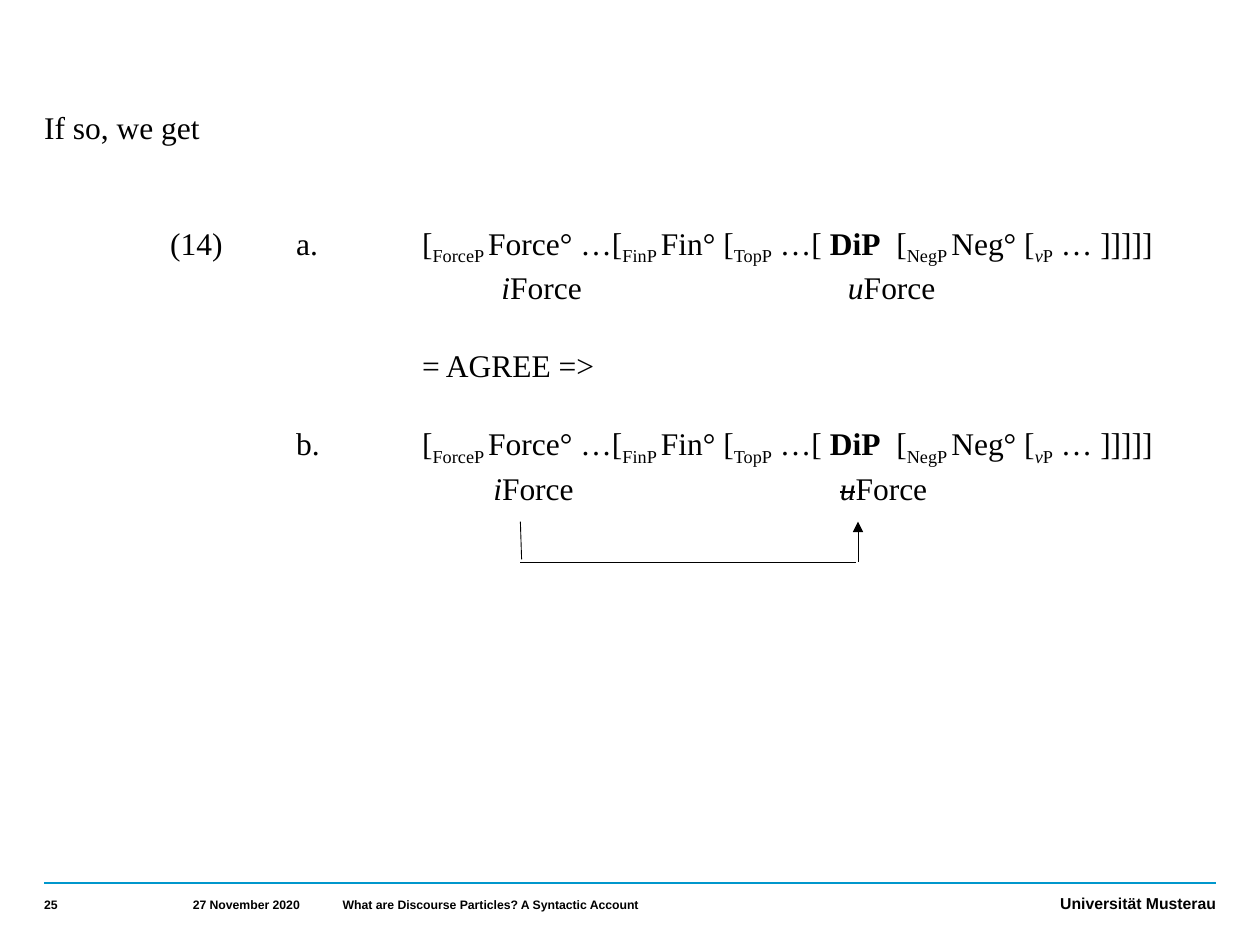
from dataclasses import dataclass

from lxml import etree
from pptx import Presentation, util as u
from pptx.dml.color import RGBColor
from pptx.enum import shapes, text
from pptx.oxml.ns import qn


@dataclass(frozen=True)
class Theme:
    """Colours, fonts and type sizes of the deck."""
    ink: str = "000000"
    accent: str = "0097CC"
    serif: str = "Times New Roman"
    sans: str = "Arial"
    body: int = 18
    brand: int = 9
    footer: int = 7
    leading: float = 1.05


class Deck:
    """Draws on the current slide, with lengths in percent of its size."""

    def __init__(self, theme, width, height):
        """Open a presentation with one blank slide."""
        self.theme, self.prs = theme, Presentation()
        self.prs.slide_width, self.prs.slide_height = u.Inches(width), u.Inches(height)
        self.s = self.prs.slides.add_slide(self.prs.slide_layouts[6])

    def x(self, share):
        """Turn a share of the width into a length."""
        return round(self.prs.slide_width * share / 100)

    def y(self, share):
        """Turn a share of the height into a length."""
        return round(self.prs.slide_height * share / 100)

    def frame(self, left, top, width, height, **fmt):
        """Add an empty text box and return its text frame."""
        sp = self.s.shapes.add_textbox(self.x(left), self.y(top), self.x(width), self.y(height))
        tf = sp.text_frame
        base = dict(margin_left=0, margin_top=0, margin_right=0, margin_bottom=0, word_wrap=True)
        for name, value in {**base, **fmt}.items():
            setattr(tf, name, value)
        return tf

    def run(self, p, words, font, size, xml=None, **fmt):
        """Append a run with its format."""
        r = p.add_run()
        r.text = words
        for name, value in dict(name=font, size=u.Pt(size), **fmt).items():
            setattr(r.font, name, value)
        r.font.color.rgb = RGBColor.from_string(self.theme.ink)
        for name, value in (xml or {}).items():
            r._r.get_or_add_rPr().set(name, value)

    def footer(self, words, left, width, size, align=text.PP_ALIGN.LEFT):
        """Add a bold label under the rule."""
        tf = self.frame(left, 94.13, width, 3.2, margin_bottom=u.Inches(0.06),
                        vertical_anchor=text.MSO_ANCHOR.BOTTOM)
        p = tf.paragraphs[0]
        p.alignment = align
        self.run(p, words, self.theme.sans, size, bold=True)

    def body(self, box, lines):
        """Fill one text box with lines of (blank lines before, tab stops, runs)."""
        t = self.theme
        tf = self.frame(*box)
        for i, (gap, stops, runs) in enumerate(lines):
            p = tf.add_paragraph() if i else tf.paragraphs[0]
            p.line_spacing, p.space_before = t.leading, u.Pt(gap * 21.7)
            if stops:
                tabs = etree.SubElement(p._p.get_or_add_pPr(), qn("a:tabLst"))
                for stop in stops:
                    etree.SubElement(tabs, qn("a:tab"), pos=str(self.x(stop)), algn="l")
            for words, fmt in runs:
                self.run(p, words, t.serif, t.body, **fmt)

    def line(self, start, end, color, weight, arrow=False):
        """Draw a straight line, with an arrowhead at its end if asked."""
        c = self.s.shapes.add_connector(
            shapes.MSO_CONNECTOR.STRAIGHT,
            self.x(start[0]), self.y(start[1]), self.x(end[0]), self.y(end[1]))
        c.line.color.rgb = RGBColor.from_string(color)
        c.line.width = u.Pt(weight)
        if arrow:
            etree.SubElement(c.line._get_or_add_ln(), qn("a:tailEnd"), type="triangle")
        etree.SubElement(c._element.spPr, qn("a:effectLst"))


PLAIN, BOLD, ITALIC = {}, {"bold": True}, {"italic": True}
SUB = {"xml": {"baseline": "-25000"}}
STRUCK = {"italic": True, "xml": {"strike": "sngStrike"}}
CLAUSE = [
    ("[", PLAIN), ("ForceP ", SUB), ("Force° …[", PLAIN), ("FinP ", SUB),
    ("Fin° [", PLAIN), ("TopP", SUB), (" …[ ", PLAIN), ("DiP", BOLD), ("  [", PLAIN),
    ("NegP ", SUB), ("Neg° [", PLAIN), ("v", {**SUB, **ITALIC}), ("P", SUB),
    (" … ]]]]]", PLAIN),
]


def features(probe):
    """Return the runs that name the two Force features."""
    return [("\t", PLAIN), ("i", ITALIC), ("Force\t", PLAIN), ("u", probe), ("Force", PLAIN)]


def main():
    """Build the slide and save it."""
    t = Theme()
    deck = Deck(t, 10, 7.5)
    left, right = 3.5, 96.5
    deck.line((left, 93.47), (right, 93.47), t.accent, 1)
    deck.footer("Universität Musterau", 62.6, 33.9, t.brand, text.PP_ALIGN.RIGHT)
    for words, start, width in (
            ("What are Discourse Particles? A Syntactic Account", 27.2, 33.9),
            ("25", left, 10.2), ("27 November 2020", 15.3, 10.2)):
        deck.footer(words, start, width, t.footer)

    number, letter, clause = 10, 20, 30
    deck.body((left, 11.2, 92.9, 77.73), [
        (0, (), [("If so, we get", PLAIN)]),
        (2, (number, letter, clause), [("\t(14)\ta.\t", PLAIN), *CLAUSE]),
        (0, (36.3, 63.8), features(ITALIC)),
        (1, (clause,), [("\t= AGREE =>", PLAIN)]),
        (1, (letter, clause), [("\tb.\t", PLAIN), *CLAUSE]),
        (0, (35.65, 63.15), features(STRUCK)),
    ])

    top, base = 55.2, 59.47
    deck.line((68.1, base), (68.1, top), t.ink, 0.5, arrow=True)
    for start in (49.2, 41.3):
        deck.line((start, base), (start + 18.75, base), t.ink, 0.5)
    deck.line((41.3, top), (41.4, 59.2), t.ink, 0.5)
    deck.prs.save("out.pptx")


if __name__ == "__main__":
    main()
